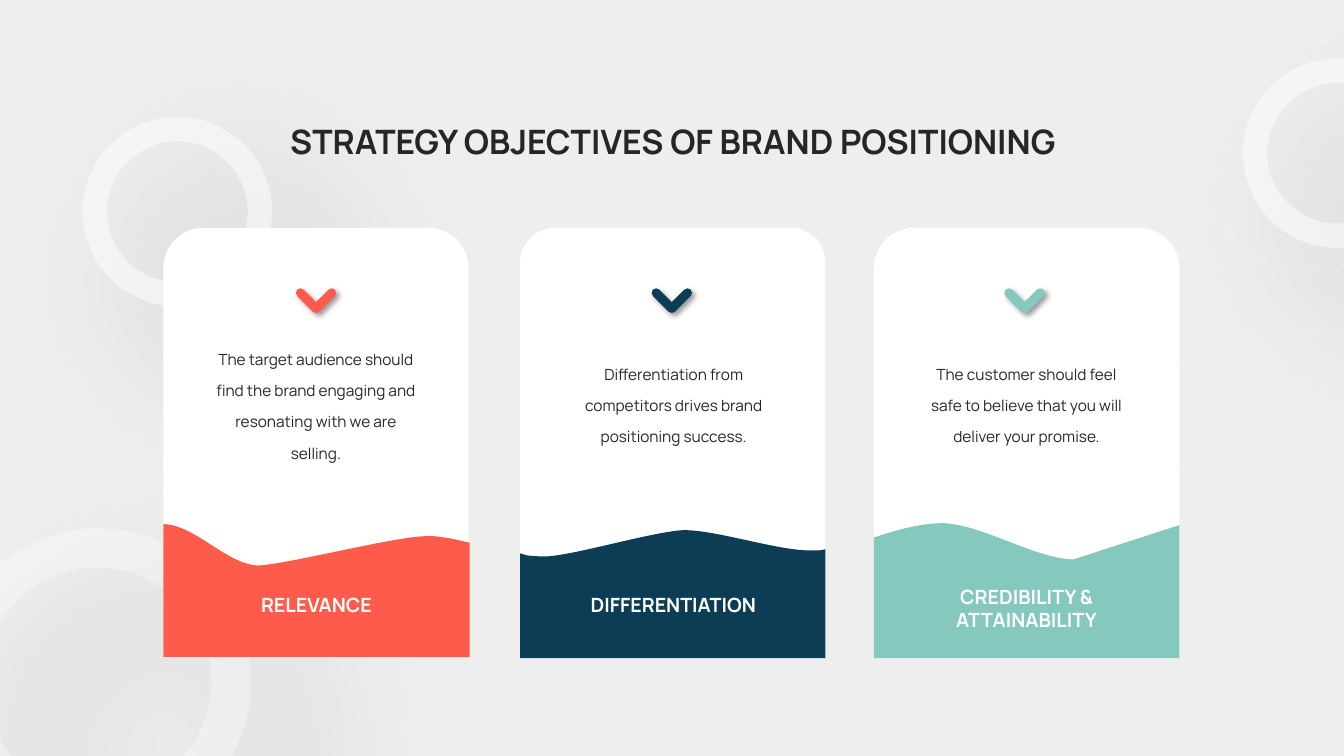
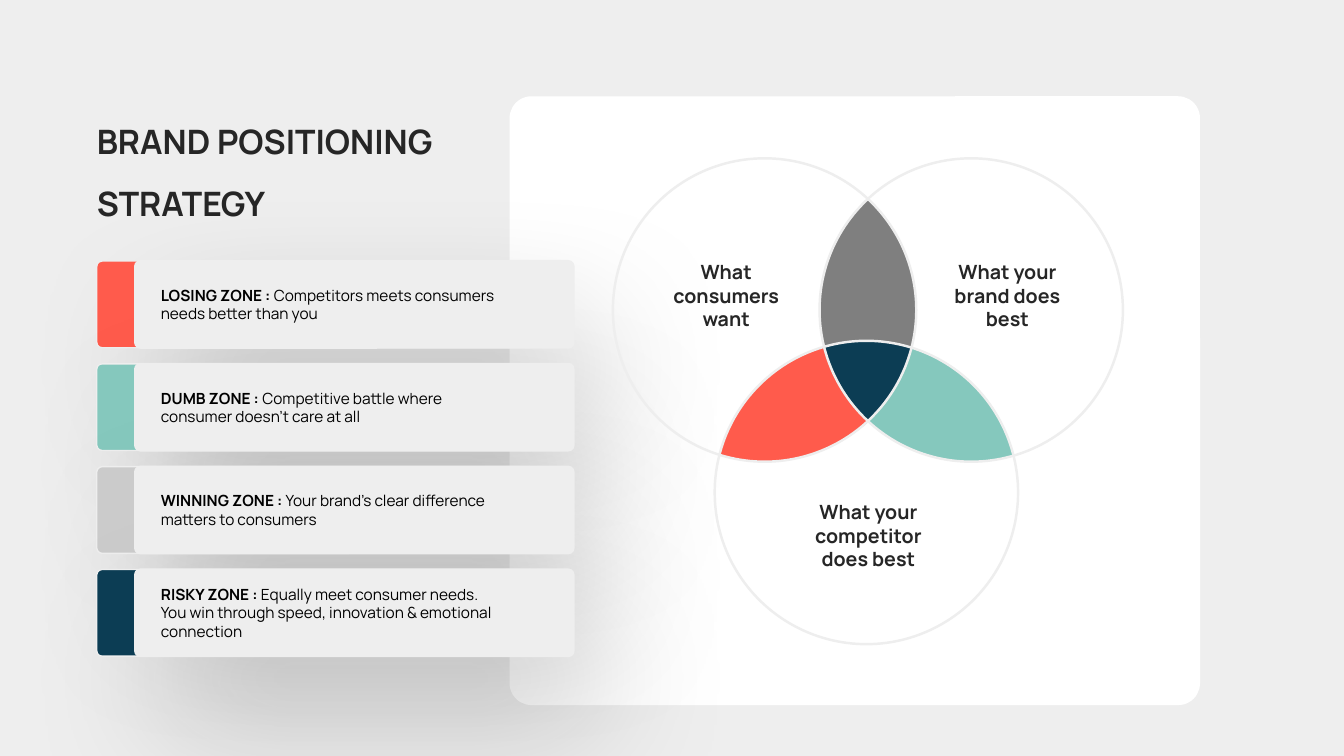
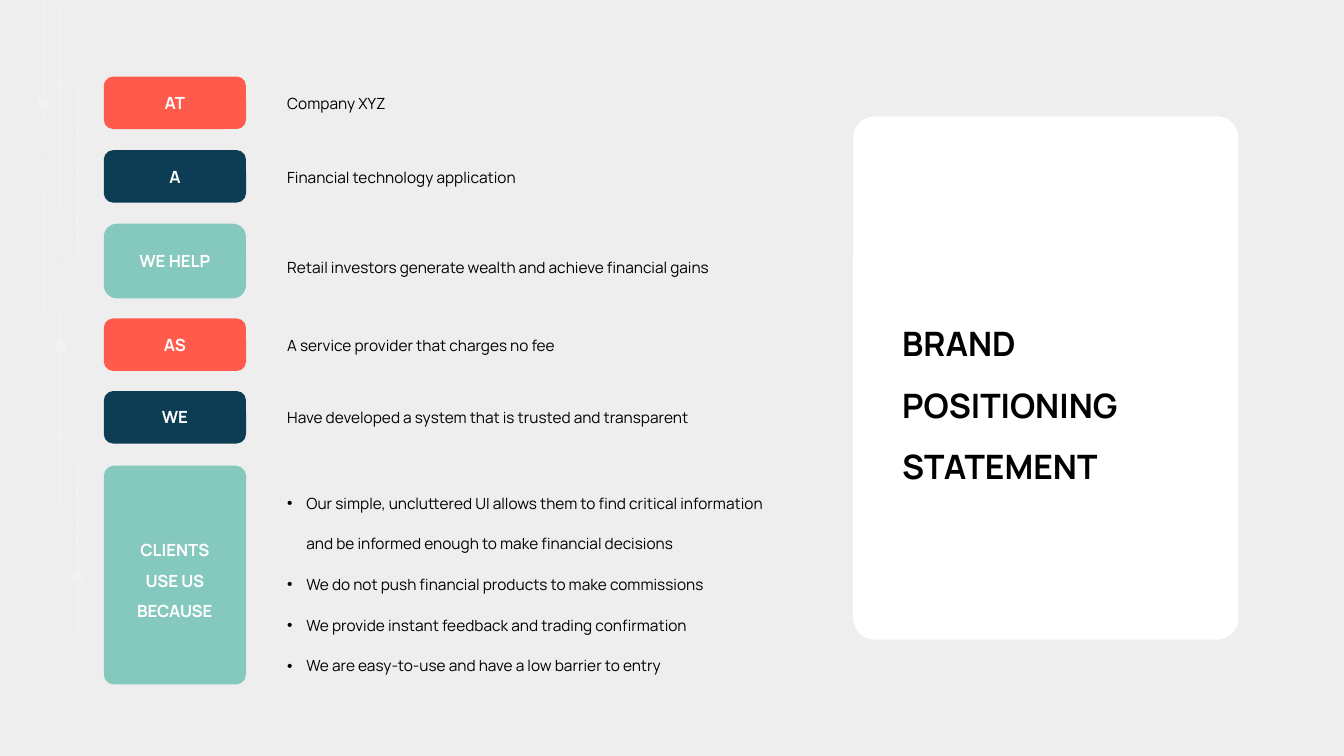
from dataclasses import dataclass
from math import atan2, ceil, cos, floor, pi, radians, sin, tan, tau
from typing import Optional

from lxml.etree import SubElement
from pptx import Presentation
from pptx.dml.color import RGBColor
from pptx.enum.shapes import MSO_SHAPE
from pptx.enum.text import MSO_ANCHOR, MSO_AUTO_SIZE, PP_ALIGN
from pptx.oxml.ns import qn
from pptx.util import Inches, Pt

RED, NAVY, TEAL = "FF5B4C", "0C3D54", "85C8BD"
PAPER, WHITE, INK, BLACK = "EEEEEE", "FFFFFF", "262626", "000000"
PALE, GREY, DOT = "CBCBCB", "7F7F7F", "F2F2F2"
ZERO = (0, 0, 0, 0)

HEAD = {"name": "Manrope", "size": Pt(24), "bold": True}
LABEL = {"name": "Manrope", "size": Pt(14), "bold": True}
TAG = {"name": "Manrope", "size": Pt(12), "bold": True}
BODY = {"name": "Manrope", "size": Pt(11), "bold": False}
STRONG = {**BODY, "bold": True}


@dataclass
class Shade:
    color: str
    alpha: int
    blur: int
    dist: int
    angle: int


DEEP = Shade(BLACK, 40, 100, 65, 45)
SOFT = Shade(BLACK, 20, 100, 65, 45)
TIGHT = Shade(BLACK, 40, 4, 3, 45)
GLOW = Shade("3553D3", 5, 52, 4, 90)


@dataclass
class Card:
    left: float
    tick: float
    curve: float
    color: str
    cap: str
    foot: tuple
    text: str
    body: tuple
    wave: list


@dataclass
class Zone:
    color: str
    name: str
    lines: list


@dataclass
class Row:
    color: str
    top: float
    high: float
    tag: list
    text: Optional[str] = None
    space: Optional[float] = None


def rgb(code: str) -> RGBColor:
    return RGBColor.from_string(code)


def paint(shape, fill=None, line=None, width=1.0, alpha=None, shade=None, turn=0):
    shape.rotation = turn
    shape.shadow.inherit = False
    if fill:
        shape.fill.solid()
        shape.fill.fore_color.rgb = rgb(fill)
    else:
        shape.fill.background()
    if line:
        shape.line.color.rgb = rgb(line)
        shape.line.width = Pt(width)
    else:
        shape.line.fill.background()
    props = shape._element.spPr
    if alpha:
        for tone in props.iter(qn("a:srgbClr")):
            SubElement(tone, qn("a:alpha"), val=str(alpha * 1000))
    if shade:
        drop = SubElement(
            props.find(qn("a:effectLst")), qn("a:outerShdw"),
            blurRad=str(Pt(shade.blur)), dist=str(Pt(shade.dist)),
            dir=str(shade.angle * 60000), algn="tl", rotWithShape="0")
        tone = SubElement(drop, qn("a:srgbClr"), val=shade.color)
        SubElement(tone, qn("a:alpha"), val=str(shade.alpha * 1000))
    return shape


def draw(slide, kind, box, adj=(), **look):
    shape = slide.shapes.add_shape(kind, *map(Inches, box))
    for spot, value in enumerate(adj):
        shape.adjustments[spot] = value
    return paint(shape, **look)


def trace(slide, parts: list, **look):
    pairs = [part[i:i + 2] for part in parts for i in range(0, len(part), 2)]
    first, *rest = [(Inches(x), Inches(y)) for x, y in pairs]
    pen = slide.shapes.build_freeform(*first, scale=1.0)
    pen.add_line_segments(rest, close=True)
    shape = pen.convert_to_shape()
    route = shape._element.spPr.find(".//" + qn("a:path"))
    lines = iter(route.findall(qn("a:lnTo")))
    for part in parts[1:]:
        group = [next(lines) for _ in range(len(part) // 2)]
        if len(group) == 3:
            curve = SubElement(route, qn("a:cubicBezTo"))
            group[0].addprevious(curve)
            for line in group:
                curve.append(line[0])
                route.remove(line)
    return paint(shape, **look)


def arc(mid: tuple, radius: float, start: float, end: float) -> list:
    low, high = sorted((start, end))
    quarter = pi / 2
    cuts = [k * quarter for k in range(floor(low / quarter), ceil(high / quarter) + 1)]
    turns = [low, *(c for c in cuts if low + 0.01 < c < high - 0.01), high]
    if start > end:
        turns.reverse()

    def spot(turn: float, pull: float = 0) -> tuple:
        return (mid[0] + radius * (cos(turn) - pull * sin(turn)),
                mid[1] + radius * (sin(turn) + pull * cos(turn)))

    parts = [spot(start)]
    for a, b in zip(turns, turns[1:]):
        pull = 4 / 3 * tan((b - a) / 4)
        parts.append(spot(a, pull) + spot(b, -pull) + spot(b))
    return parts


def short(mid: tuple, radius: float, head: tuple, tail: tuple) -> list:
    start, end = (atan2(y - mid[1], x - mid[0]) for x, y in (head, tail))
    return arc(mid, radius, start, start + (end - start + pi) % tau - pi)


def write(frame, paras, font, color, align=PP_ALIGN.LEFT, space=None,
          anchor=MSO_ANCHOR.TOP, inset=ZERO, bullet=False):
    frame.word_wrap = True
    frame.vertical_anchor = anchor
    sides = ("left", "top", "right", "bottom")
    for side, gap in zip(sides, inset):
        setattr(frame, f"margin_{side}", Inches(gap))
    for i, runs in enumerate(paras):
        para = frame.add_paragraph() if i else frame.paragraphs[0]
        para.alignment = align
        if space:
            para.line_spacing = space
        if bullet:
            props = para._p.get_or_add_pPr()
            props.set("marL", str(Inches(0.19)))
            props.set("indent", str(-Inches(0.19)))
            tone = SubElement(props, qn("a:buClr"))
            SubElement(tone, qn("a:srgbClr"), val=BLACK)
            SubElement(props, qn("a:buFont"), typeface="Arial")
            SubElement(props, qn("a:buChar"), char="•")
        for text, style in [(runs, font)] if isinstance(runs, str) else runs:
            for j, piece in enumerate(text.split("\n")):
                if j:
                    para.add_line_break()
                run = para.add_run()
                run.text = piece
                for key, value in style.items():
                    setattr(run.font, key, value)
                run.font.color.rgb = rgb(color)


def note(slide, box, paras, font, color, **rest):
    frame = slide.shapes.add_textbox(*map(Inches, box)).text_frame
    write(frame, paras, font, color, **rest)
    frame.auto_size = MSO_AUTO_SIZE.SHAPE_TO_FIT_TEXT


def title(slide, box, paras, color=INK, align=PP_ALIGN.LEFT):
    note(slide, box, paras, HEAD, color, align=align, space=1.53)


def panel(slide, box, curve: float):
    draw(slide, MSO_SHAPE.ROUNDED_RECTANGLE, box, (curve,), fill=WHITE, turn=270)


def ring(slide, left: float, top: float, size: float, alpha: int):
    draw(slide, MSO_SHAPE.DONUT, (left, top, size, size), (0.129,),
         fill=WHITE, alpha=alpha, shade=DEEP)


def tick(slide, x: float, y: float, color: str):
    size, half = 0.31, 0.045
    far = size - half
    parts = arc((x + half, y + half), half, pi, radians(270))
    parts += arc((x + far, y + half), half, radians(-90), radians(90))
    parts.append((x + 2 * half, y + 2 * half))
    parts += arc((x + half, y + far), half, 0, pi)
    trace(slide, parts, fill=color, shade=TIGHT, turn=225)


CARDS = [
    Card(1.62, 2.98, 0.133, RED, "RELEVANCE", (2.55, 5.88, 1.18, 0.24),
         "The target audience should find the brand engaging and resonating "
         "with we are selling.", (2.12, 3.44, 2.03, 1.05),
         [(1.62, 5.2), (1.93, 5.2, 2.26, 5.61, 2.57, 5.61),
          (2.88, 5.59, 3.89, 5.33, 4.21, 5.32),
          (4.32, 5.31, 4.48, 5.34, 4.64, 5.38), (4.66, 5.38),
          (4.66, 6.52), (1.62, 6.52)]),
    Card(5.16, 6.51, 0.114, NAVY, "DIFFERENTIATION", (5.79, 5.88, 1.78, 0.24),
         "Differentiation from competitors drives brand positioning success.",
         (5.67, 3.57, 2.03, 0.78),
         [(6.77, 5.26), (7.09, 5.25, 7.73, 5.47, 8.05, 5.46),
          (8.08, 5.46, 8.11, 5.46, 8.13, 5.46), (8.19, 5.45), (8.19, 6.53),
          (5.16, 6.53), (5.16, 5.49), (5.23, 5.51),
          (5.3, 5.52, 5.37, 5.52, 5.43, 5.52),
          (5.73, 5.5, 6.46, 5.28, 6.77, 5.26)]),
    Card(8.67, 10.01, 0.133, TEAL, "CREDIBILITY & ATTAINABILITY",
         (8.88, 5.8, 2.61, 0.47),
         "The customer should feel safe to believe that you will deliver "
         "your promise.", (9.17, 3.57, 2.03, 0.78),
         [(9.33, 5.19), (9.73, 5.19, 10.25, 5.54, 10.65, 5.55), (11.7, 5.21),
          (11.7, 6.53), (8.67, 6.53), (8.67, 5.33), (8.68, 5.33),
          (8.89, 5.26, 9.1, 5.2, 9.33, 5.19)]),
]


def goals(slide):
    ring(slide, 0.82, 1.16, 1.88, 51)
    for x, y, size in ((9.79, -1.33, 6.16), (10.75, -0.66, 4.76),
                       (11.43, -0.09, 3.4), (11.88, 0.4, 2.29)):
        draw(slide, MSO_SHAPE.OVAL, (x, y, size, size),
             line=WHITE, width=1.5, alpha=13, shade=GLOW)
    title(slide, (2.57, 0.99, 8.21, 0.49),
          ["STRATEGY OBJECTIVES OF BRAND POSITIONING"], align=PP_ALIGN.CENTER)
    ring(slide, -0.55, 5.24, 3.04, 32)
    ring(slide, 12.33, 0.58, 1.88, 51)
    mode = {"align": PP_ALIGN.CENTER, "anchor": MSO_ANCHOR.MIDDLE}
    for card in CARDS:
        draw(slide, MSO_SHAPE.ROUND_2_SAME_RECTANGLE,
             (card.left, 2.26, 3.03, 4.27), (card.curve, 0), fill=WHITE)
        trace(slide, card.wave, fill=card.color)
        note(slide, card.foot, [card.cap], LABEL, WHITE, **mode)
        note(slide, card.body, [card.text], BODY, INK, space=1.69, **mode)
        tick(slide, card.tick, 2.75, card.color)


ZONES = [
    Zone(RED, "LOSING ZONE : ",
         ["Competitors meets consumers", "needs better than you"]),
    Zone(TEAL, "DUMB ZONE : ",
         ["Competitive battle where", "consumer doesn’t care at all"]),
    Zone(PALE, "WINNING ZONE : ",
         ["Your brand’s clear difference", "matters to consumers"]),
    Zone(NAVY, "RISKY ZONE : ",
         ["Equally meet consumer needs. \n"
          "You win through speed, innovation & emotional connection"]),
]


def venn(slide):
    size = 3.01
    radius = size / 2
    spots = ((7.09, 3.38), (8.13, 1.57), (6.08, 1.57))
    rival, brand, want = [(x + radius, y + radius) for x, y in spots]
    top, core = (8.62, 1.98), (8.62, 4.18)
    left, right = (8.18, 3.45), (9.05, 3.45)
    west, east = (7.15, 4.52), (10.06, 4.52)
    zones = [
        (GREY, (want, top, right), (rival, right, left), (brand, left, top)),
        (RED, (rival, west, left), (brand, left, core), (want, core, west)),
        (TEAL, (rival, right, east), (brand, east, core), (want, core, right)),
        (NAVY, (rival, left, right), (want, right, core), (brand, core, left)),
    ]
    for color, *arcs in zones:
        parts = []
        for mid, head, tail in arcs:
            bend = short(mid, radius, head, tail)
            parts += bend[1:] if parts else bend
        trace(slide, parts, fill=color)
    for x, y in spots:
        draw(slide, MSO_SHAPE.OVAL, (x, y, size, size),
             line=PAPER, width=1.75, turn=180)
    for x, y, wide, text in (
            (6.37, 2.53, 1.67, "What consumers want"),
            (9.31, 2.53, 1.37, "What your brand does best"),
            (7.89, 4.91, 1.45, "What your competitor does best")):
        note(slide, (x, y, wide, 0.81), [text], LABEL, INK,
             align=PP_ALIGN.CENTER, inset=(0.1, 0.05, 0.1, 0.05))


def plan(slide):
    panel(slide, (5.46, 0.55, 6.04, 6.85), 0.036)
    title(slide, (0.96, 0.99, 3.65, 1.01), ["BRAND POSITIONING", "STRATEGY"])
    spots = [(zone, 2.59 + 1.02 * i) for i, zone in enumerate(ZONES)]
    for zone, y in spots:
        draw(slide, MSO_SHAPE.ROUNDED_RECTANGLE, (0.96, y, 4.35, 0.86),
             (0.062,), fill=zone.color, line=PAPER, shade=SOFT)
    for zone, y in spots:
        bar = draw(slide, MSO_SHAPE.ROUNDED_RECTANGLE, (1.34, y, 4.35, 0.86),
                   (0.062,), fill=PAPER, line=PAPER, width=1.5)
        first, *rest = zone.lines
        write(bar.text_frame, [[(zone.name, STRONG), (first, BODY)], *rest],
              BODY, BLACK, anchor=MSO_ANCHOR.MIDDLE,
              inset=(0.24, 0.05, 0.12, 0.05))
    venn(slide)


ROWS = [
    Row(RED, 0.77, 0.5, ["AT"], "Company XYZ"),
    Row(NAVY, 1.5, 0.5, ["A"], "Financial technology application"),
    Row(TEAL, 2.23, 0.72, ["WE HELP"],
        "Retail investors generate wealth and achieve financial gains", 1.84),
    Row(RED, 3.17, 0.5, ["AS"], "A service provider that charges no fee"),
    Row(NAVY, 3.89, 0.5, ["WE"],
        "Have developed a system that is trusted and transparent"),
    Row(TEAL, 4.63, 2.15, ["CLIENTS", "USE US", "BECAUSE"]),
]
CLAIMS = [
    "Our simple, uncluttered UI allows them to find critical information "
    "and be informed enough to make financial decisions",
    "We do not push financial products to make commissions",
    "We provide instant feedback and trading confirmation",
    "We are easy-to-use and have a low barrier to entry",
]


def beam(slide, left: float, top: float, long: float):
    bar = draw(slide, MSO_SHAPE.RECTANGLE, (left, top, long, 0.02), turn=270)
    props = bar._element.spPr
    grad = SubElement(props, qn("a:gradFill"), rotWithShape="1")
    props.replace(props.find(qn("a:noFill")), grad)
    stops = SubElement(grad, qn("a:gsLst"))
    for spot, color in ((0, WHITE), (50, PAPER), (100, WHITE)):
        stop = SubElement(stops, qn("a:gs"), pos=str(spot * 1000))
        tone = SubElement(stop, qn("a:srgbClr"), val=color)
        if color == WHITE:
            SubElement(tone, qn("a:alpha"), val="0")
    SubElement(grad, qn("a:lin"), ang="0", scaled="0")


def pitch(slide):
    for left, top, long in ((-2.78, 3.53, 7.09), (-2.16, 2.55, 5.51),
                            (-1.34, 1.56, 3.54)):
        beam(slide, left, top, long)
    for x, y in ((0.71, 5.67), (0.54, 3.38), (0.37, 0.96)):
        draw(slide, MSO_SHAPE.OVAL, (x, y, 0.12, 0.12), fill=DOT)
    for row in ROWS:
        tall = len(row.tag) > 1
        tag = draw(slide, MSO_SHAPE.ROUNDED_RECTANGLE,
                   (1.04, row.top, 1.39, row.high), (0.065 if tall else 0.167,),
                   fill=row.color, line=row.color, width=1.5)
        write(tag.text_frame, row.tag, TAG, WHITE, align=PP_ALIGN.CENTER,
              anchor=MSO_ANCHOR.MIDDLE, inset=(0.07, 0.03, 0.07, 0.03),
              space=1.53 if tall else None)
        if row.text:
            drop, high = (0.22, 0.26) if row.space else (0.16, 0.19)
            note(slide, (2.85, row.top + drop, 4.96, high), [row.text],
                 BODY, BLACK, anchor=MSO_ANCHOR.MIDDLE, space=row.space)
    note(slide, (2.85, 4.68, 4.96, 1.97), CLAIMS, BODY, BLACK,
         space=2.2, bullet=True)
    panel(slide, (7.78, 1.84, 5.19, 3.82), 0.055)
    title(slide, (8.95, 2.99, 2.85, 1.52), ["BRAND POSITIONING STATEMENT"], BLACK)


def main():
    deck = Presentation()
    deck.slide_width, deck.slide_height = Inches(40 / 3), Inches(7.5)
    back = deck.slide_master.background.fill
    back.solid()
    back.fore_color.rgb = rgb(PAPER)
    for build in (goals, plan, pitch):
        build(deck.slides.add_slide(deck.slide_layouts[6]))
    deck.save("out.pptx")


if __name__ == "__main__":
    main()
